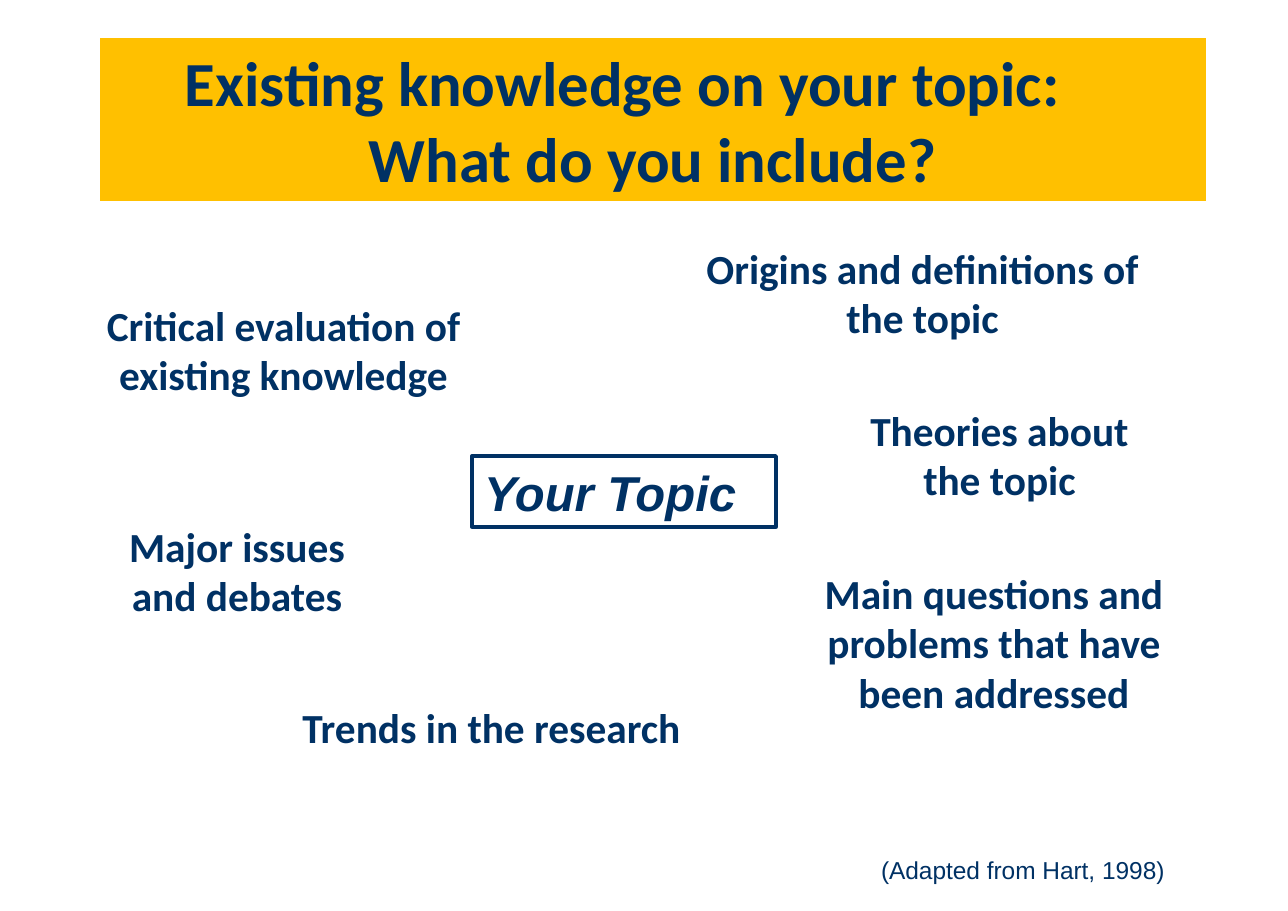
from dataclasses import dataclass

from pptx import Presentation
from pptx.dml.color import RGBColor
from pptx.enum.shapes import MSO_SHAPE
from pptx.enum.text import MSO_ANCHOR, PP_ALIGN
from pptx.util import Emu, Pt

RECTANGLE = MSO_SHAPE.RECTANGLE
LEFT, CENTER = PP_ALIGN.LEFT, PP_ALIGN.CENTER
TOP, MIDDLE = MSO_ANCHOR.TOP, MSO_ANCHOR.MIDDLE

EMU_PER_PX = 8298
NAVY = "003164"
GOLD = "FFC000"
TITLE_SHIFT = 60


@dataclass(frozen=True)
class Label:
    text: str
    left: int
    top: int
    width: int
    height: int
    size: int = 27
    font: str = "Calibri"
    bold: bool = True
    italic: bool = False
    align: PP_ALIGN = CENTER


SOURCE = Label("(Adapted from Hart, 1998)", 869, 848, 376, 42, 16, "Arial", False, align=LEFT)
TITLE = Label("Existing knowledge on your topic:\vWhat do you include?", 100, 38, 1106, 163, 41)
TOPIC = Label("Your Topic", 472, 456, 304, 71, 32, "Arial", italic=True, align=LEFT)
IDEAS = [
    Label("Trends in the research", 289, 695, 405, 63),
    Label("Origins and definitions of the topic", 694, 236, 457, 116),
    Label("Main questions and problems that have been addressed", 776, 561, 436, 163),
    Label("Major issues and debates", 86, 514, 302, 116),
    Label("Theories about the topic", 847, 398, 305, 116),
    Label("Critical evaluation of existing knowledge", 35, 293, 497, 115),
]


def px(length: int) -> Emu:
    return Emu(length * EMU_PER_PX)


def color(value: str) -> RGBColor:
    return RGBColor.from_string(value)


def write_text(shape, label: Label, anchor=TOP) -> None:
    text_frame = shape.text_frame
    text_frame.text = label.text
    text_frame.word_wrap = True
    text_frame.vertical_anchor = anchor
    text_frame.margin_left = text_frame.margin_right = px(12)
    text_frame.margin_top = text_frame.margin_bottom = px(7)
    paragraph = text_frame.paragraphs[0]
    paragraph.alignment = label.align
    for run in paragraph.runs:
        run.font.name = label.font
        run.font.size = Pt(label.size)
        run.font.bold = label.bold
        run.font.italic = label.italic
        run.font.color.rgb = color(NAVY)


def add_text(slide, label: Label) -> None:
    box = slide.shapes.add_textbox(
        px(label.left), px(label.top), px(label.width), px(label.height)
    )
    write_text(box, label)


def add_rectangle(slide, label: Label, anchor=TOP):
    shape = slide.shapes.add_shape(
        RECTANGLE, px(label.left), px(label.top), px(label.width), px(label.height)
    )
    shape.shadow.inherit = False
    write_text(shape, label, anchor)
    return shape


def add_title(slide) -> None:
    shape = add_rectangle(slide, TITLE, MIDDLE)
    shape.fill.solid()
    shape.fill.fore_color.rgb = color(GOLD)
    shape.line.fill.background()
    shape.text_frame.margin_left = px(0)
    shape.text_frame.margin_right = px(TITLE_SHIFT)
    properties = shape.text_frame.paragraphs[0]._p.get_or_add_pPr()
    properties.set("marL", str(px(TITLE_SHIFT)))
    properties.set("indent", str(px(-TITLE_SHIFT)))


def add_topic(slide) -> None:
    shape = add_rectangle(slide, TOPIC)
    shape.fill.background()
    shape.line.color.rgb = color(NAVY)
    shape.line.width = Pt(2.25)


def main() -> None:
    presentation = Presentation()
    presentation.slide_width = px(1288)
    presentation.slide_height = px(911)
    slide = presentation.slides.add_slide(presentation.slide_layouts[6])
    add_text(slide, SOURCE)
    add_title(slide)
    for idea in IDEAS:
        add_text(slide, idea)
    add_topic(slide)
    presentation.save("out.pptx")


if __name__ == "__main__":
    main()
